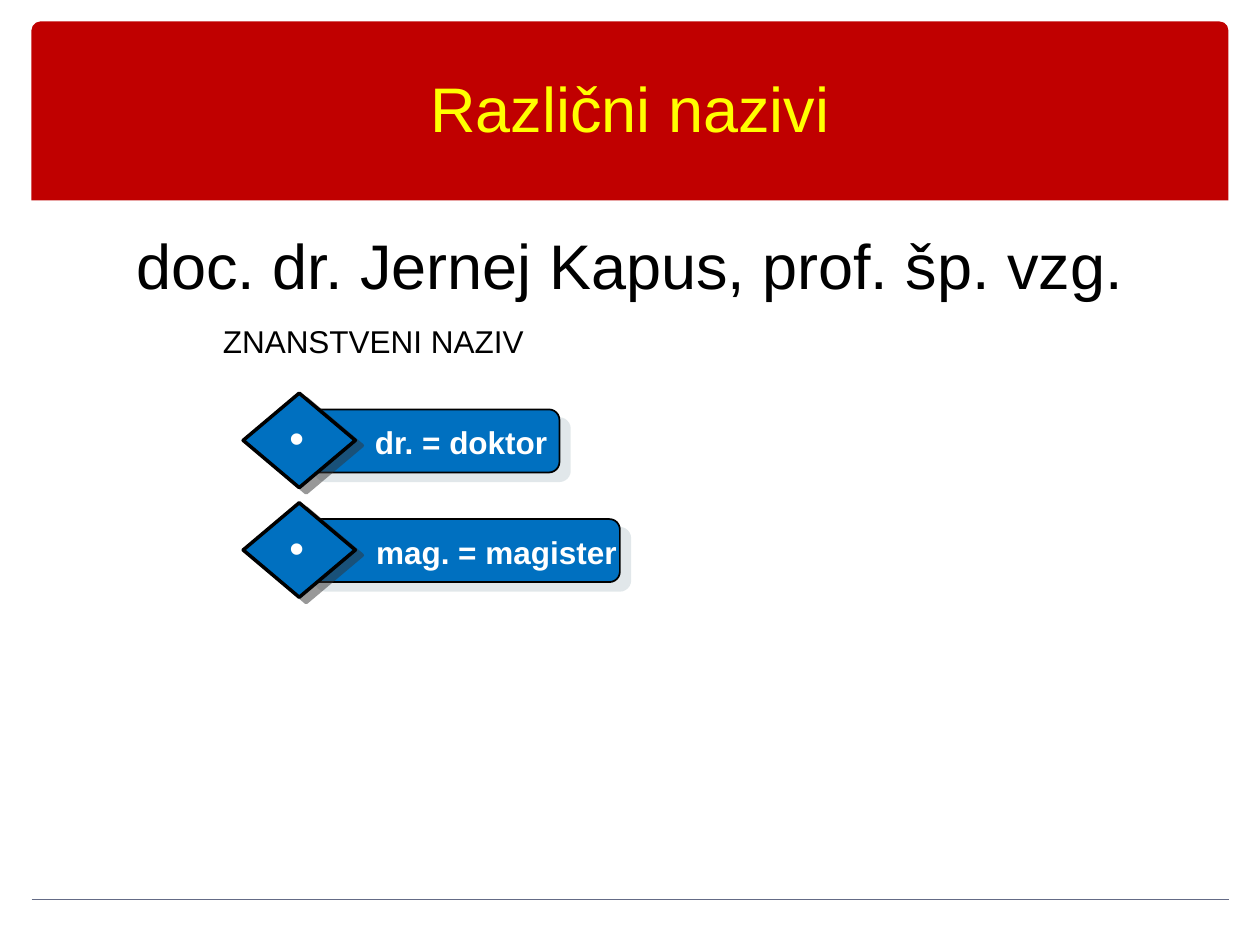
from dataclasses import dataclass

from lxml.etree import SubElement
from pptx import Presentation
from pptx.dml.color import RGBColor
from pptx.enum.shapes import MSO_CONNECTOR, MSO_SHAPE
from pptx.enum.text import MSO_ANCHOR, PP_ALIGN
from pptx.oxml.ns import qn
from pptx.util import Inches, Pt


@dataclass(frozen=True)
class Theme:
    """Hold the colours, font and type sizes."""
    font: str = "Arial"
    red: str = "C00000"
    blue: str = "0070C0"
    yellow: str = "FFFF00"
    black: str = "000000"
    white: str = "FFFFFF"
    rule: str = "646B86"
    pale: str = "C5D1D7"
    dark: str = "333333"
    big: int = 36
    mid: int = 24
    base: int = 18


THEME = Theme()


def color(code):
    """Turn a hex code into a colour."""
    return RGBColor.from_string(code)


def add_text(slide, text, box, size=THEME.base, ink=THEME.black, bold=False,
             align=PP_ALIGN.CENTER, anchor=MSO_ANCHOR.TOP, wrap=True, before=0):
    """Add one line of text in a box."""
    frame = slide.shapes.add_textbox(*map(Inches, box)).text_frame
    frame.word_wrap = wrap
    frame.vertical_anchor = anchor
    para = frame.paragraphs[0]
    para.alignment = align
    para.space_before = Pt(before)
    run = para.add_run()
    run.text = text
    run.font.name = THEME.font
    run.font.size = Pt(size)
    run.font.bold = bold
    run.font.color.rgb = color(ink)


def add_form(slide, kind, box, fill, line=0):
    """Add a filled shape, outlined in black if it has a line width."""
    form = slide.shapes.add_shape(kind, *map(Inches, box))
    form.shadow.inherit = False
    form.fill.solid()
    form.fill.fore_color.rgb = color(fill)
    if line:
        form.line.color.rgb = color(THEME.black)
        form.line.width = Pt(line)
    else:
        form.line.fill.background()
    return form


def cast(form, tint, reach, angle):
    """Give a shape a hard, half clear shadow."""
    effect = form._element.spPr.find(qn("a:effectLst"))
    shade = SubElement(effect, qn("a:outerShdw"), blurRad="0",
                       dist=str(Pt(reach)), dir=str(angle * 60000),
                       algn="ctr", rotWithShape="0")
    tone = SubElement(shade, qn("a:srgbClr"), val=tint)
    SubElement(tone, qn("a:alpha"), val="50000")


def add_rule(slide, left, right, top):
    """Add the thin line at the foot."""
    rule = slide.shapes.add_connector(
        MSO_CONNECTOR.STRAIGHT, *map(Inches, (left, top, right, top)))
    rule.line.color.rgb = color(THEME.rule)
    rule.line.width = Pt(1)
    SubElement(rule._element.spPr, qn("a:effectLst"))


def add_item(slide, text, top, width, span):
    """Add a bar with its diamond, label and bullet."""
    bar = add_form(slide, MSO_SHAPE.ROUNDED_RECTANGLE,
                   (2.42, top + 0.13, width, 0.5), THEME.blue, line=1)
    cast(bar, THEME.pale, 7.8, 40)
    gem = add_form(slide, MSO_SHAPE.DIAMOND, (1.93, top, 0.89, 0.75),
                   THEME.blue, line=2)
    cast(gem, THEME.dark, 5, 37)
    add_text(slide, text, (2.72, top + 0.19, span, 0.4),
             ink=THEME.white, bold=True)
    add_text(slide, "•", (2.18, top + 0.1, 0.35, 0.5), size=THEME.mid,
             ink=THEME.white, wrap=False)


def main():
    """Build and save the slide."""
    deck = Presentation()
    deck.slide_width, deck.slide_height = Inches(10), Inches(7.5)
    slide = deck.slides.add_slide(deck.slide_layouts[6])

    band = add_form(slide, MSO_SHAPE.ROUND_2_SAME_RECTANGLE,
                    (0.25, 0.17, 9.5, 1.42), THEME.red)
    band.adjustments[0] = 0.05
    add_rule(slide, 0.25, 9.75, 7.14)
    add_text(slide, "Različni nazivi", (0.5, 0.17, 9, 1.37), size=THEME.big,
             ink=THEME.yellow, anchor=MSO_ANCHOR.MIDDLE)
    add_text(slide, "doc. dr. Jernej Kapus, prof. šp. vzg.",
             (0.5, 1.75, 9, 0.82), size=THEME.big, before=4)

    items = [("dr. = doktor", 2.02, 1.88), ("mag. = magister", 2.5, 2.44)]
    for row, (text, width, span) in enumerate(items):
        add_item(slide, text, 3.12 + 0.87 * row, width, span)
    add_text(slide, "ZNANSTVENI NAZIV", (1.67, 2.51, 2.59, 0.4),
             align=PP_ALIGN.LEFT, wrap=False)

    deck.save("out.pptx")


if __name__ == "__main__":
    main()
